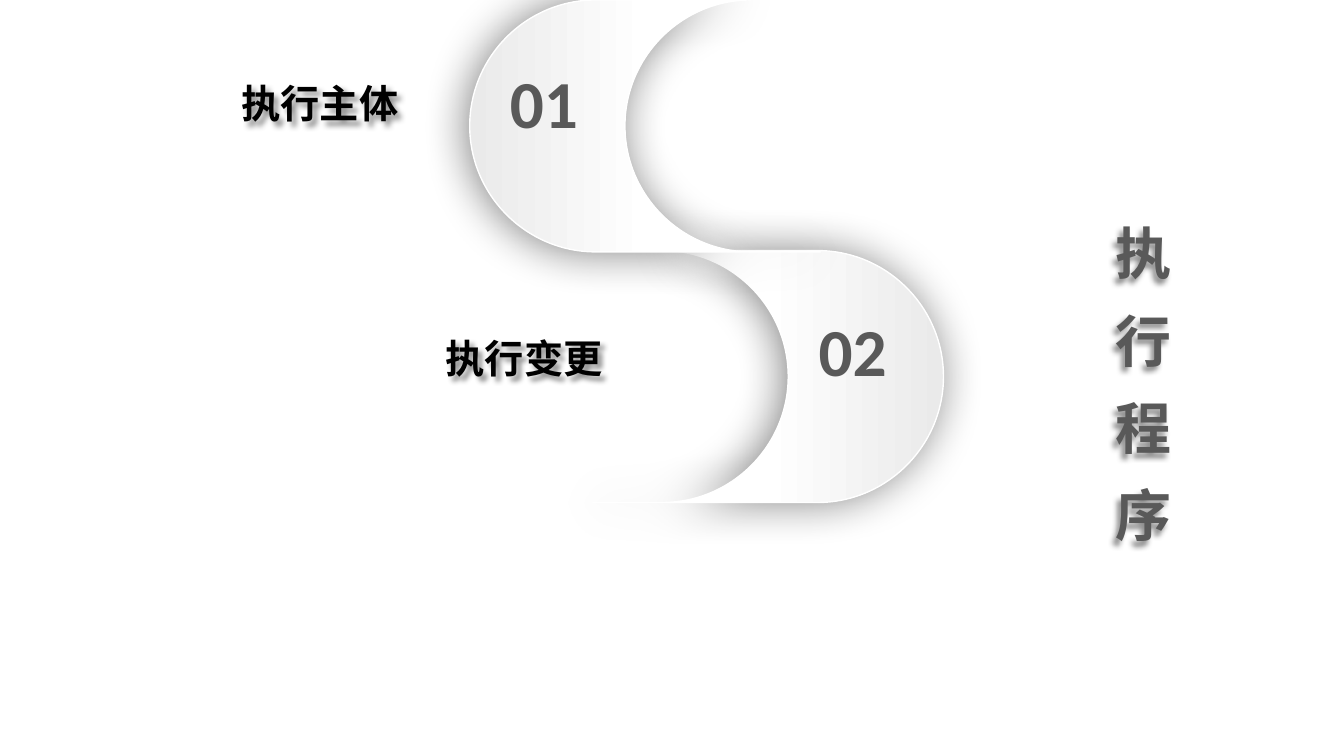
from lxml.etree import SubElement
from pptx import Presentation
from pptx.dml.color import RGBColor
from pptx.enum.text import MSO_AUTO_SIZE, PP_ALIGN
from pptx.oxml import parse_xml
from pptx.oxml.ns import nsdecls, qn
from pptx.util import Inches, Pt

COLS = 40
RADIUS = 3.75
BEND = 0.55


def color(code):
    return RGBColor.from_string(code)


def shade(shape, alpha, blur, dist, angle):
    shape._element.spPr.append(parse_xml(
        f'<a:effectLst {nsdecls("a")}><a:outerShdw blurRad="{Pt(blur)}" '
        f'dist="{Pt(dist)}" dir="{angle * 60000}" algn="ctr" rotWithShape="0">'
        f'<a:srgbClr val="000000"><a:alpha val="{alpha * 1000}"/></a:srgbClr>'
        '</a:outerShdw></a:effectLst>'))


def write(box, text, font="Calibri", size=28, ink="000000",
          align=PP_ALIGN.LEFT, space=1.0):
    para = box.text_frame.paragraphs[0]
    para.alignment = align
    para.line_spacing = space
    run = para.add_run()
    run.text = text
    run.font.size = Pt(size)
    run.font.bold = True
    run.font.color.rgb = color(ink)
    run.font.name = font
    if not text.isdigit():
        east = SubElement(run.font._element, qn("a:ea"))
        east.set("typeface", "Noto Sans CJK JP")


def bend(shape, turns):
    steps = list(shape._element.iter(qn("a:moveTo"), qn("a:lnTo")))
    ends = [[int(step[0].get(axis)) for axis in "xy"] for step in steps]
    for turn in turns:
        (x1, y1), (x2, y2) = ends[turn - 1], ends[turn]
        corner = (x1, y2) if turn % 2 else (x2, y1)
        step = steps[turn]
        step.tag = qn("a:cubicBezTo")
        for spot, end in enumerate([(x1, y1), (x2, y2)]):
            pull = [round(a + BEND * (b - a)) for a, b in zip(end, corner)]
            point = parse_xml(f'<a:pt {nsdecls("a")} x="{pull[0]}" y="{pull[1]}"/>')
            step.insert(spot, point)


class Board:
    gray = "595959"
    stops = [(0, "EAEAEA"), (0.51, "FFFFFF")]

    def __init__(self, deck):
        self.unit = deck.slide_width / COLS
        self.slide = deck.slides.add_slide(deck.slide_layouts[6])

    def grid(self, *cells):
        return [round(cell * self.unit) for cell in cells]

    def label(self, text, place, turn=0, cast=None, **style):
        box = self.slide.shapes.add_textbox(*self.grid(*place))
        box.rotation = turn
        frame = box.text_frame
        frame.word_wrap = True
        frame.auto_size = MSO_AUTO_SIZE.SHAPE_TO_FIT_TEXT
        if turn:
            frame._txBody.bodyPr.set("vert", "vert270")
        write(box, text, **style)
        if cast:
            shade(box, 43, 4, 4, cast)

    def hook(self, top, flip=None):
        mid, low = top + RADIUS, top + 2 * RADIUS
        back, notch, tip = 17.73, 22.35, 24.42
        dots = [(back, top), (notch, top), (notch - RADIUS, mid), (notch, low),
                (tip, low), (back, low), (back - RADIUS, mid), (back, top)]
        stops = self.stops
        if flip:
            dots = [(flip - x, y) for x, y in dots]
            stops = [(1 - spot, code) for spot, code in stops[::-1]]
        dots = [self.grid(*dot) for dot in dots]
        maker = self.slide.shapes.build_freeform(*dots[0])
        maker.add_line_segments(dots[1:], close=True)
        shape = maker.convert_to_shape()
        bend(shape, (2, 3, 6, 7))
        shape.fill.gradient()
        shape.fill.gradient_angle = 0
        for stop, (spot, code) in zip(shape.fill.gradient_stops, stops):
            stop.position = spot
            stop.color.rgb = color(code)
        shape.line.color.rgb = color("FFFFFF")
        shape.line.width = Pt(1)
        shade(shape, 47, 32, 3, 180)


def main():
    deck = Presentation()
    deck.slide_width, deck.slide_height = Inches(13.33), Inches(7.5)
    board = Board(deck)
    board.hook(7.46, flip=42.06)
    board.hook(0)
    for text, left, top in [("01", 14.88, 2.14), ("02", 24.07, 9.52)]:
        board.label(text, (left, top, 3.5, 2.25), size=48, ink=board.gray, space=0.8)
    board.label("执行程序", (28.56, 10.11, 10.9, 2.22), turn=90, cast=135, size=40,
                ink=board.gray, align=PP_ALIGN.CENTER, space=1.3)
    for text, place in [("执行变更", (12.81, 9.81, 5.58, 1.71)),
                        ("执行主体", (5.52, 2.22, 8, 1.71))]:
        board.label(text, place, cast=45, font="Noto Sans CJK JP",
                    align=PP_ALIGN.CENTER)
    deck.save("out.pptx")


if __name__ == "__main__":
    main()
